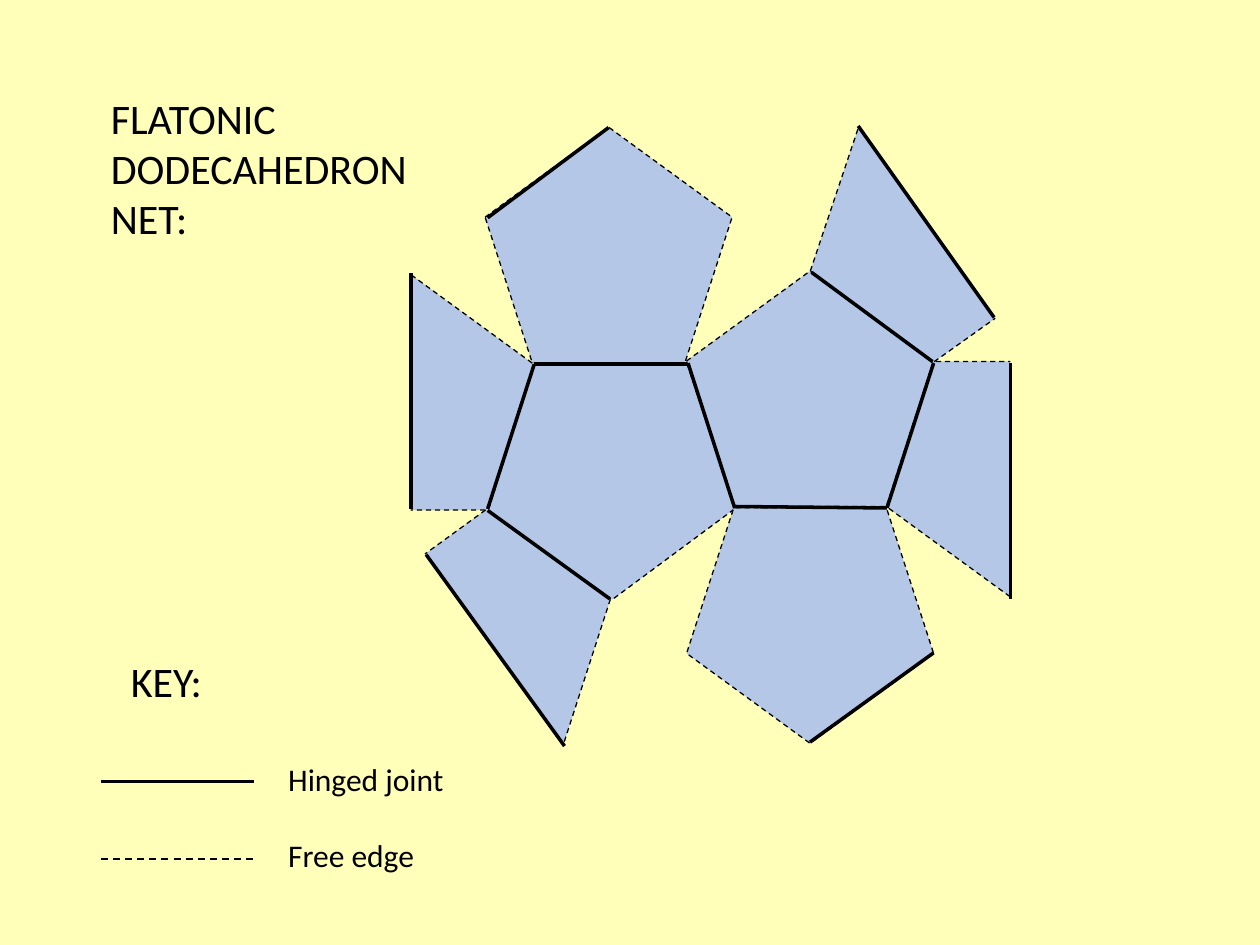
"""Build a slide showing the net of a flat-folding dodecahedron with a key."""
from math import cos, radians, sin

from lxml.etree import SubElement
from pptx import Presentation
from pptx.dml.color import RGBColor
from pptx.enum.dml import MSO_LINE_DASH_STYLE as Dash
from pptx.enum.shapes import MSO_CONNECTOR as Connector, MSO_SHAPE as Shape
from pptx.enum.text import MSO_ANCHOR as Anchor, PP_ALIGN as Align
from pptx.oxml.ns import qn
from pptx.util import Cm, Pt

BLACK, CREAM, BLUE = (RGBColor.from_string(value) for value in ("000000", "FFFFB9", "B4C7E7"))
FACE_WIDTH, FACE_HEIGHT = 4.98, 4.75
MASK_WIDTH, MASK_HEIGHT = 2.77, 5.16


def add_edge(shapes, start, end, width=2):
    """Draw a straight black line between two points in centimetres."""
    edge = shapes.add_connector(Connector.STRAIGHT, *map(Cm, start + end))
    edge.line.color.rgb = BLACK
    edge.line.width = Pt(width)
    SubElement(edge._element.spPr, qn("a:effectLst"))
    return edge


def add_centred(kind, x, y, width, height, rotation, fill):
    """Add a rotated, filled shape to the net around its centre."""
    shape = net.shapes.add_shape(
        kind, Cm(x - width / 2), Cm(y - height / 2), Cm(width), Cm(height))
    shape.rotation = rotation
    shape.shadow.inherit = False
    shape.fill.solid()
    shape.fill.fore_color.rgb = fill
    return shape


deck = Presentation()
deck.slide_width, deck.slide_height = Cm(25.4), Cm(19.05)
slide = deck.slides.add_slide(deck.slide_layouts[5])
slide.background.fill.solid()
slide.background.fill.fore_color.rgb = CREAM

title = slide.shapes.title
title.left, title.top, title.width, title.height = Cm(1.98), Cm(1.73), Cm(6.55), Cm(3.33)
title.text_frame.text = "FLATONIC DODECAHEDRON NET:"
title.text_frame.vertical_anchor = Anchor.TOP
title_para = title.text_frame.paragraphs[0]
title_para.alignment = Align.LEFT
title_para.font.name = "Calibri"
title_para.font.size = Pt(24)
title_para.font.color.rgb = BLACK

add_edge(slide.shapes, (2.03, 15.75), (5.13, 15.75))
free_sample = add_edge(slide.shapes, (2.03, 17.32), (5.13, 17.32), 1)
free_sample.line.dash_style = Dash.DASH

net = slide.shapes.add_group_shape()
faces = [
    (16.33, 7.84, 0, None),
    (12.47, 9.26, 35.5, None),
    (16.33, 12.61, 180, None),
    (20.37, 9.66, 180, 0),
    (18.69, 4.48, 324.6, 324.6),
    (12.27, 4.94, 0, None),
    (8.28, 7.91, 0, 180),
    (9.96, 13.09, 144, 144),
]
for x, y, rotation, mask_angle in faces:
    face = add_centred(Shape.REGULAR_PENTAGON, x, y, FACE_WIDTH, FACE_HEIGHT, rotation, BLUE)
    face.line.color.rgb = BLACK
    face.line.width = Pt(0.75)
    face.line.dash_style = Dash.DASH
    if mask_angle is not None:
        mask_x = x + MASK_WIDTH / 2 * cos(radians(mask_angle))
        mask_y = y + MASK_WIDTH / 2 * sin(radians(mask_angle))
        mask = add_centred(
            Shape.RECTANGLE, mask_x, mask_y, MASK_WIDTH, MASK_HEIGHT, mask_angle, CREAM)
        mask.line.fill.background()

hinges = [
    ((13.87, 7.32), (14.81, 10.24)),
    ((14.78, 10.21), (17.88, 10.24)),
    ((18.82, 7.32), (17.88, 10.24)),
    ((20.37, 7.32), (20.37, 12.07)),
    ((18.80, 7.29), (16.36, 5.49)),
    ((20.04, 6.40), (17.30, 2.54)),
    ((16.33, 14.96), (18.82, 13.16)),
    ((9.83, 4.39), (12.27, 2.57)),
    ((9.83, 10.26), (10.77, 7.34)),
    ((8.28, 10.26), (8.28, 5.51)),
    ((9.83, 10.29), (12.29, 12.07)),
    ((8.59, 11.18), (11.38, 15.04)),
    ((10.77, 7.34), (13.84, 7.34)),
]
for start, end in hinges:
    add_edge(net.shapes, start, end)

key_texts = [
    (5.56, 15.19, 4.55, 2.57, 18, ["Hinged joint", "Free edge"]),
    (2.39, 13.08, 2.62, 1.27, 24, ["KEY:"]),
]
for left, top, width, height, size, lines in key_texts:
    box = slide.shapes.add_textbox(Cm(left), Cm(top), Cm(width), Cm(height))
    box.text_frame.word_wrap = True
    box.text_frame.text = "\n".join(lines)
    for index, para in enumerate(box.text_frame.paragraphs):
        para.space_before = Pt(22 * index)
        para.font.name = "Calibri"
        para.font.size = Pt(size)
        para.font.color.rgb = BLACK

deck.save("out.pptx")
